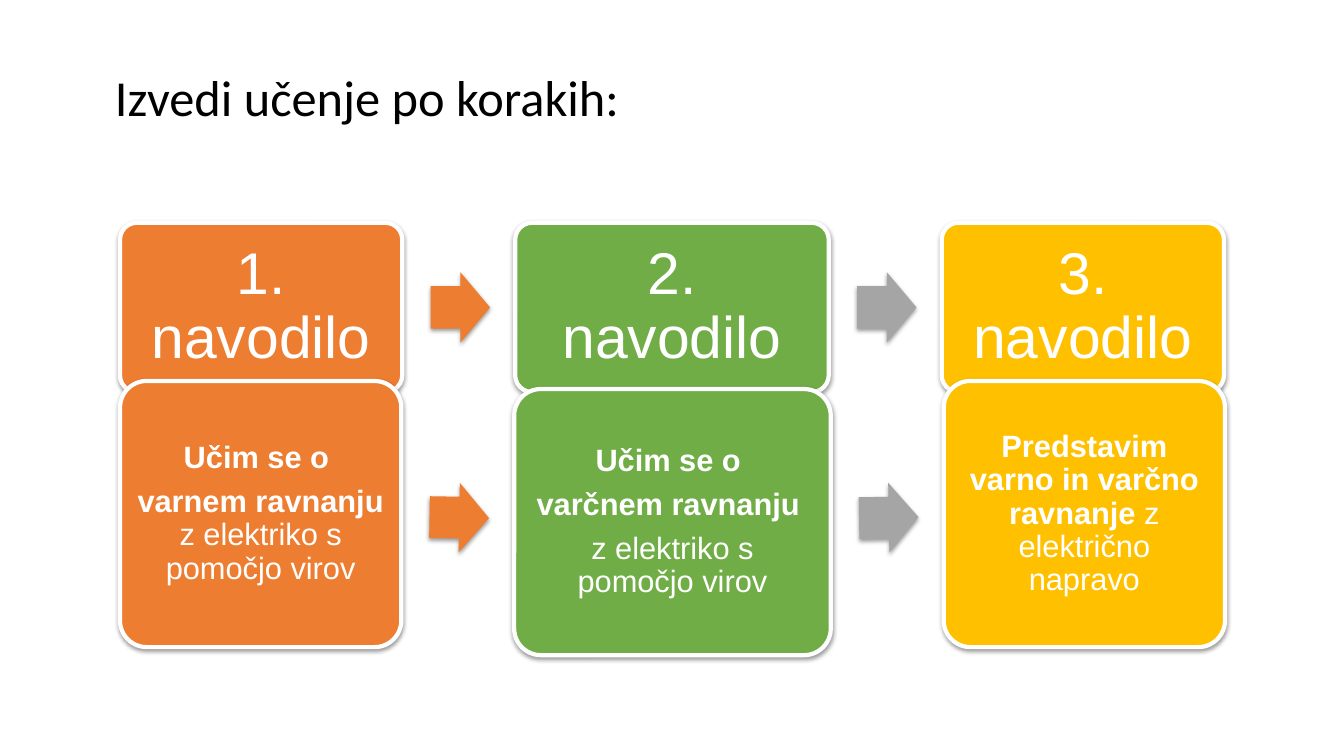
import pptx
import pptx.util
import pptx.dml.color
import pptx.enum.shapes
import pptx.enum.text
import pptx.oxml.ns
from lxml import etree

px = 9144
hex_color = pptx.dml.color.RGBColor.from_string
preset = pptx.enum.shapes.MSO_SHAPE
anchor = pptx.enum.text.MSO_ANCHOR
align = pptx.enum.text.PP_ALIGN


def write(paragraph, text, size=22, bold=False, font="Arial", color="FFFFFF",
          alignment=align.CENTER, after=0):
    paragraph.alignment = alignment
    paragraph.line_spacing = 0.9
    paragraph.space_before = pptx.util.Pt(0)
    paragraph.space_after = pptx.util.Pt(after)
    run = paragraph.add_run()
    run.text = text
    run.font.size = pptx.util.Pt(size)
    run.font.bold = bold
    run.font.name = font
    run.font.color.rgb = hex_color(color)


def add_block(group, kind, box, color, adjustments):
    block = group.shapes.add_shape(kind, *[side * px for side in box])
    for index, value in enumerate(adjustments):
        block.adjustments[index] = value
    block.fill.solid()
    block.fill.fore_color.rgb = hex_color(color)
    block.shadow.inherit = False
    effects = block._element.spPr.find(pptx.oxml.ns.qn("a:effectLst"))
    shadow = etree.SubElement(effects, pptx.oxml.ns.qn("a:outerShdw"), blurRad="40000",
                              dist="20000", dir="5400000", algn="ctr", rotWithShape="0")
    black = etree.SubElement(shadow, pptx.oxml.ns.qn("a:srgbClr"), val="000000")
    etree.SubElement(black, pptx.oxml.ns.qn("a:alpha"), val="38000")
    return block


deck = pptx.Presentation()
deck.slide_width = 1333 * px
deck.slide_height = 750 * px
slide = deck.slides.add_slide(deck.slide_layouts[5])

heading = slide.shapes.title
heading.left, heading.top, heading.width, heading.height = 92 * px, 67 * px, 1150 * px, 80 * px
heading_frame = heading.text_frame
heading_frame.vertical_anchor = anchor.TOP
heading_frame.margin_left = 22 * px
heading_frame.margin_top = 5 * px
write(heading_frame.paragraphs[0], "Izvedi učenje po korakih:", size=36,
      font="Calibri", color="000000", alignment=align.LEFT)

orange, green, yellow, gray = "ED7D31", "70AD47", "FFC000", "A5A5A5"
instructions = [
    ((119, 221, 280, 168), orange, [[("1. navodilo", False)]]),
    ((511, 221, 311, 168), green, [[("2. navodilo", False)]]),
    ((934, 221, 280, 168), yellow, [[("3. navodilo", False)]]),
]
instruction_arrows = [((427, 270, 59, 70), orange, 0), ((850, 270, 59, 70), gray, 0)]
tasks = [
    ((119, 378, 279, 264), orange, [
        [("Učim se o ", True)],
        [("varnem ravnanju ", True), ("z elektriko s pomočjo virov", False)]]),
    ((510, 386, 314, 264), green, [
        [("Učim se o ", True)],
        [("varčnem ravnanju ", True)],
        [("z elektriko s pomočjo virov", False)]]),
    ((936, 378, 279, 264), yellow, [
        [("Predstavim varno in varčno ravnanje", True), (" z električno napravo", False)]]),
]
task_arrows = [((426, 479, 59, 69), orange, 1), ((852, 479, 59, 69), gray, 359)]

for cards, arrows, size, margin, after in [
    (instructions, instruction_arrows, 42, 17, 15),
    (tasks, task_arrows, 22, 9, 7.5),
]:
    row = slide.shapes.add_group_shape()
    for step, (box, color, paragraphs) in enumerate(cards):
        card = add_block(row, preset.ROUNDED_RECTANGLE, box, color, [0.1])
        card.line.color.rgb = hex_color("FFFFFF")
        card.line.width = pptx.util.Pt(3)
        frame = card.text_frame
        frame.word_wrap = True
        frame.vertical_anchor = anchor.MIDDLE
        frame.margin_left = frame.margin_right = margin * px
        frame.margin_top = frame.margin_bottom = margin * px
        for index, runs in enumerate(paragraphs):
            paragraph = frame.add_paragraph() if index else frame.paragraphs[0]
            for text, bold in runs:
                write(paragraph, text, size=size, bold=bold, after=after)
        if step < len(arrows):
            arrow_box, arrow_color, angle = arrows[step]
            arrow = add_block(row, preset.RIGHT_ARROW, arrow_box, arrow_color, [0.6, 0.5])
            arrow.line.fill.background()
            arrow.rotation = angle

deck.save("out.pptx")
